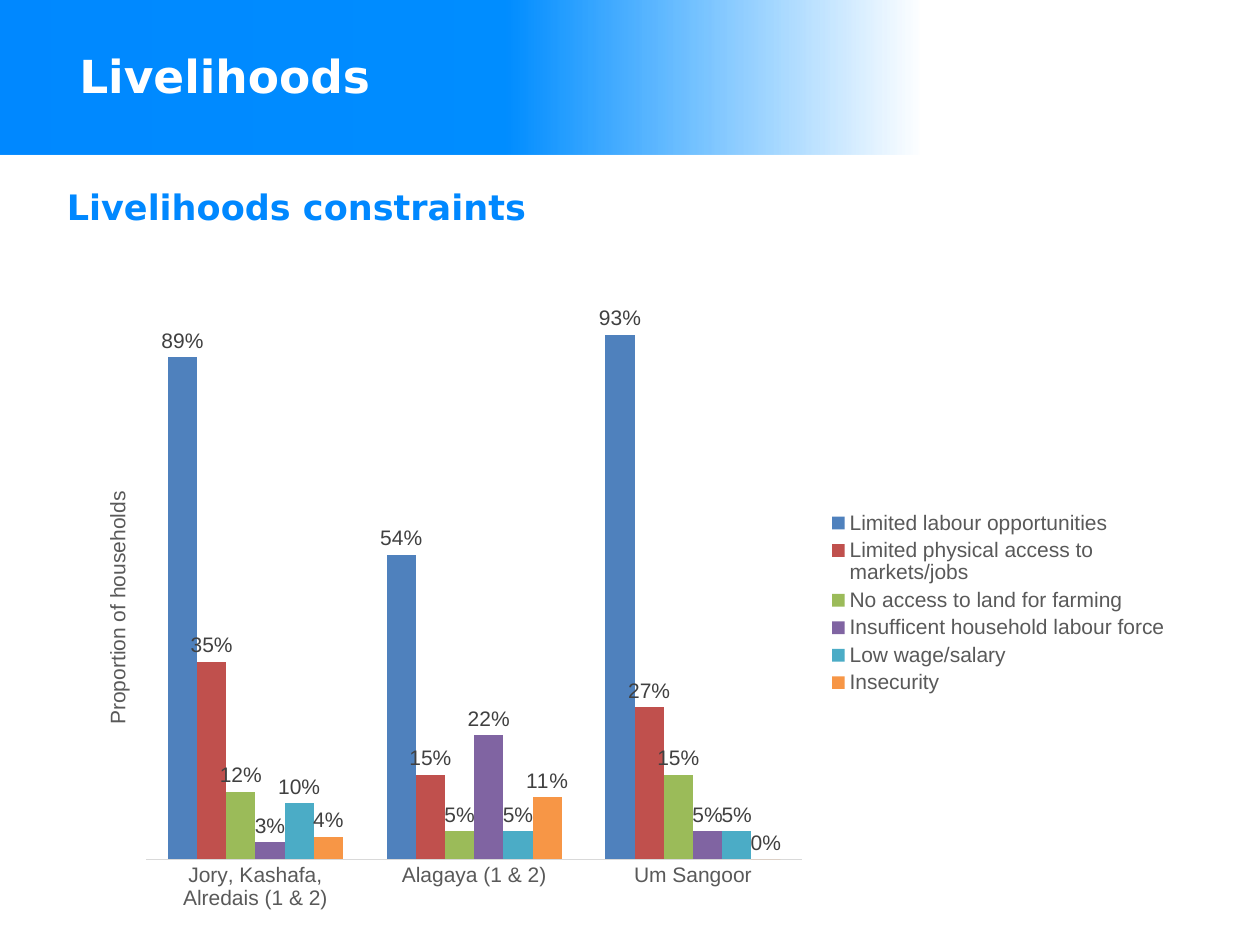
from dataclasses import dataclass

from pptx import Presentation
from pptx.chart.data import CategoryChartData
from pptx.dml.color import RGBColor
from pptx.enum.chart import XL_CHART_TYPE as ChartType
from pptx.enum.chart import XL_LABEL_POSITION as LabelPosition
from pptx.enum.chart import XL_LEGEND_POSITION as LegendPosition
from pptx.enum.chart import XL_TICK_MARK as TickMark
from pptx.enum.shapes import MSO_SHAPE as Shape
from pptx.enum.text import MSO_ANCHOR as Anchor
from pptx.oxml import parse_xml
from pptx.oxml.ns import nsdecls, qn
from pptx.util import Pt


@dataclass(frozen=True)
class Theme:
    heading_font: str = "DejaVu Sans"
    chart_font: str = "Arial"
    title_size: float = 26
    subtitle_size: float = 20
    chart_size: float = 12
    white: str = "FFFFFF"
    black: str = "000000"
    blue: str = "0088FF"
    grey: str = "595959"
    label: str = "404040"
    axis_line: str = "D9D9D9"
    # Position in percent, colour, opacity in percent
    banner: tuple = ((0, "0088FF", 100), (40, "008DFF", 100), (73, "0091FF", 0))


@dataclass(frozen=True)
class Box:
    left: float
    top: float
    width: float
    height: float

    def points(self) -> tuple:
        return tuple(Pt(v) for v in (self.left, self.top, self.width, self.height))


@dataclass(frozen=True)
class Heading:
    text: str
    box: Box
    size: float
    color: str
    anchor: Anchor
    margins: tuple  # left, top, right, bottom


@dataclass(frozen=True)
class Constraint:
    name: str
    shares: tuple
    color: str


THEME = Theme()
HEADINGS = (
    Heading("Livelihoods constraints", Box(38.2, 105.8, 646.6, 33.1),
            THEME.subtitle_size, THEME.blue, Anchor.TOP, (0, 0, 0, 0)),
    Heading("Livelihoods", Box(38.2, 9.4, 466.6, 72.7),
            THEME.title_size, THEME.white, Anchor.MIDDLE, (7.2, 0, 7.2, 5)),
)
CAMPS = ("Jory, Kashafa, Alredais (1 & 2)", "Alagaya (1 & 2)", "Um Sangoor")
CONSTRAINTS = (
    Constraint("Limited labour opportunities", (0.89, 0.54, 0.93), "4F81BD"),
    Constraint("Limited physical access to markets/jobs", (0.35, 0.15, 0.27), "C0504D"),
    Constraint("No access to land for farming", (0.12, 0.05, 0.15), "9BBB59"),
    Constraint("Insufficent household labour force", (0.03, 0.22, 0.05), "8064A2"),
    Constraint("Low wage/salary", (0.10, 0.05, 0.05), "4BACC6"),
    Constraint("Insecurity", (0.04, 0.11, 0), "F79646"),
)


def apply(target, values: dict) -> None:
    for name, value in values.items():
        setattr(target, name, value)


def style_font(font, name: str, size: float, color: str, bold: bool = False) -> None:
    apply(font, {"name": name, "size": Pt(size), "bold": bold})
    font.color.rgb = RGBColor.from_string(color)


def style_chart_font(font, color: str) -> None:
    style_font(font, THEME.chart_font, THEME.chart_size, color)


def add_banner(page, box: Box) -> None:
    banner = page.shapes.add_shape(Shape.RECTANGLE, *box.points())
    banner.shadow.inherit = False
    banner.line.fill.background()
    banner.fill.background()
    stops = "".join(
        f'<a:gs pos="{place * 1000}"><a:srgbClr val="{color}">'
        f'<a:alpha val="{opacity * 1000}"/></a:srgbClr></a:gs>'
        for place, color, opacity in THEME.banner)
    gradient = parse_xml(f'<a:gradFill {nsdecls("a")} rotWithShape="1">'
                         f'<a:gsLst>{stops}</a:gsLst><a:lin ang="0" scaled="0"/></a:gradFill>')
    properties = banner._element.spPr
    properties.replace(properties.find(qn("a:noFill")), gradient)


def add_heading(page, heading: Heading) -> None:
    frame = page.shapes.add_textbox(*heading.box.points()).text_frame
    left, top, right, bottom = (Pt(v) for v in heading.margins)
    apply(frame, {"word_wrap": True, "vertical_anchor": heading.anchor,
                  "margin_left": left, "margin_top": top,
                  "margin_right": right, "margin_bottom": bottom})
    span = frame.paragraphs[0].add_run()
    span.text = heading.text
    style_font(span.font, THEME.heading_font, heading.size, heading.color, bold=True)


def place_part(part, after: str, target: str = "", **fractions: float) -> None:
    """Lay out a chart part in fractions of the chart's size."""
    for old in part.findall(qn("c:layout")):
        part.remove(old)
    inner = f'<c:layoutTarget val="{target}"/>' if target else ""
    modes = "".join(f'<c:{axis}Mode val="edge"/>' for axis in "xy")
    sizes = "".join(f'<c:{key} val="{value}"/>' for key, value in fractions.items())
    layout = parse_xml(f'<c:layout {nsdecls("c")}><c:manualLayout>'
                       f'{inner}{modes}{sizes}</c:manualLayout></c:layout>')
    anchor = part.find(qn(after)) if after else None
    if anchor is None:
        part.insert(0, layout)
    else:
        anchor.addnext(layout)


def add_chart(page, box: Box) -> None:
    data = CategoryChartData(number_format="0%")
    data.categories = CAMPS
    for item in CONSTRAINTS:
        data.add_series(item.name, item.shares)
    chart = page.shapes.add_chart(ChartType.COLUMN_CLUSTERED, *box.points(), data).chart
    chart.has_title = False
    style_chart_font(chart.font, THEME.black)
    space = chart._chartSpace
    space.find(qn("c:txPr")).addprevious(parse_xml(
        f'<c:spPr {nsdecls("c", "a")}><a:solidFill><a:srgbClr val="{THEME.white}"/>'
        '</a:solidFill><a:ln><a:noFill/></a:ln></c:spPr>'))

    # Columns and their labels
    plot = chart.plots[0]
    apply(plot, {"gap_width": 150, "overlap": 0, "vary_by_categories": False})
    for series, item in zip(plot.series, CONSTRAINTS):
        series.format.fill.solid()
        series.format.fill.fore_color.rgb = RGBColor.from_string(item.color)
        labels = series.data_labels
        apply(labels, {"show_value": True, "position": LabelPosition.OUTSIDE_END,
                       "number_format": "0%", "number_format_is_linked": False})
        style_chart_font(labels.font, THEME.label)

    # Axes
    camps = chart.category_axis
    apply(camps, {"major_tick_mark": TickMark.NONE, "minor_tick_mark": TickMark.NONE})
    style_chart_font(camps.tick_labels.font, THEME.grey)
    camps.format.line.width = Pt(0.75)
    camps.format.line.color.rgb = RGBColor.from_string(THEME.axis_line)
    shares = chart.value_axis
    apply(shares, {"minimum_scale": 0, "maximum_scale": 1, "major_unit": 0.25,
                   "has_major_gridlines": False, "visible": False})
    frame = shares.axis_title.text_frame
    frame._txBody.bodyPr.set("rot", "-5400000")
    frame._txBody.bodyPr.set("vert", "horz")
    span = frame.paragraphs[0].add_run()
    span.text = "Proportion of households"
    style_chart_font(span.font, THEME.grey)

    # Legend and layout
    chart.has_legend = True
    apply(chart.legend, {"position": LegendPosition.RIGHT, "include_in_layout": False})
    style_chart_font(chart.legend.font, THEME.grey)
    place_part(space.chart.plotArea, "", "inner", x=0.07, y=0.02, w=0.58, h=0.88)
    place_part(shares.axis_title._element, "c:tx", x=0.03, y=0.32)
    place_part(chart.legend._element, "c:legendPos", x=0.67, y=0.35, w=0.32, h=0.3)


def main() -> None:
    deck = Presentation()
    apply(deck, {"slide_width": Pt(720), "slide_height": Pt(540)})
    page = deck.slides.add_slide(deck.slide_layouts[6])
    add_banner(page, Box(0, 0, 720, 88.6))
    for heading in HEADINGS:
        add_heading(page, heading)
    add_chart(page, Box(38.2, 161.3, 646.6, 366.5))
    deck.save("out.pptx")


if __name__ == "__main__":
    main()
